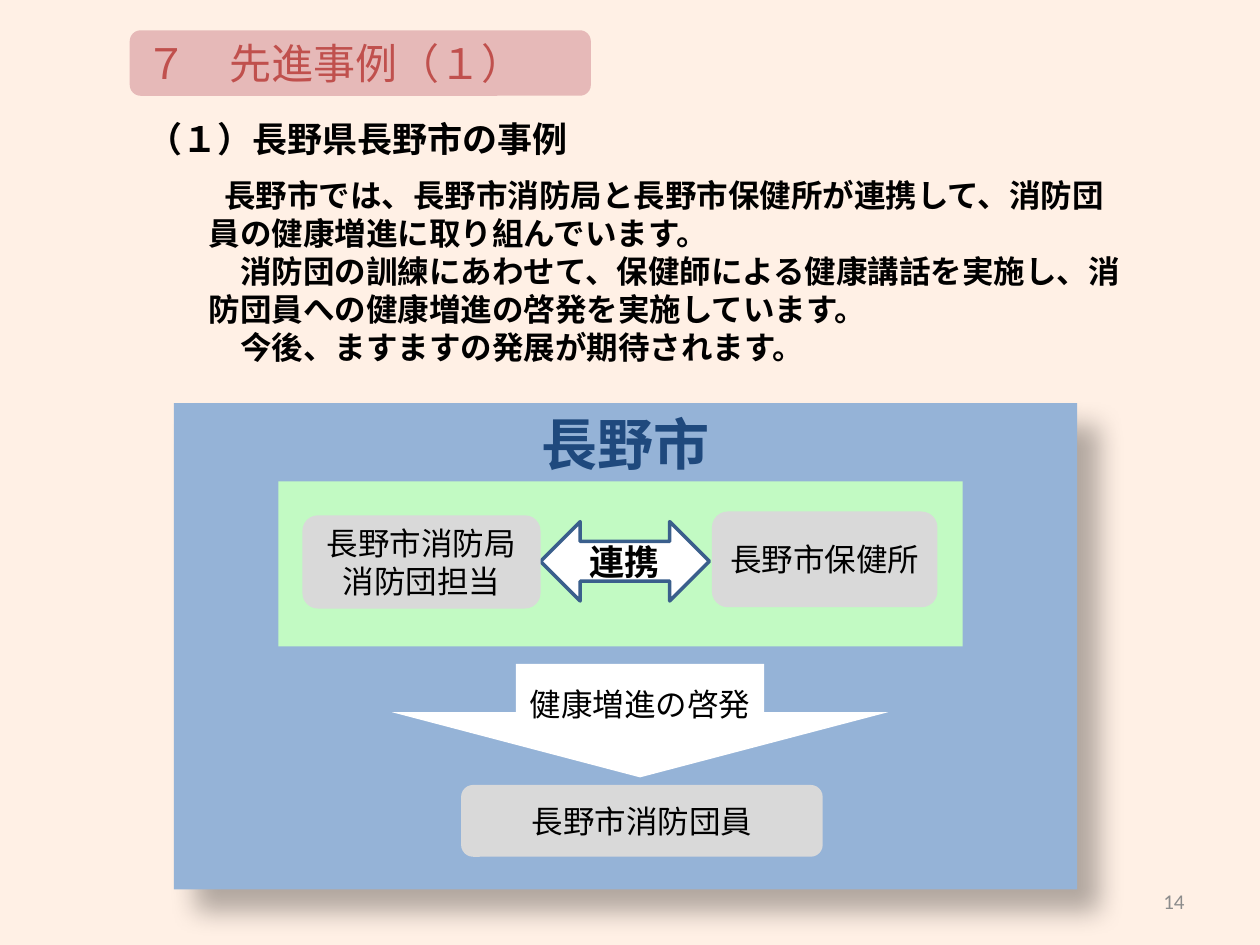
from lxml import etree
from pptx import Presentation
from pptx.dml.color import RGBColor
from pptx.enum.shapes import MSO_SHAPE
from pptx.enum.text import MSO_ANCHOR, PP_ALIGN
from pptx.oxml import parse_xml
from pptx.oxml.ns import qn
from pptx.util import Inches, Pt

RECT, ROUND = MSO_SHAPE.RECTANGLE, MSO_SHAPE.ROUNDED_RECTANGLE
TWO_WAY, DOWN = MSO_SHAPE.LEFT_RIGHT_ARROW, MSO_SHAPE.DOWN_ARROW
TOP, MIDDLE = MSO_ANCHOR.TOP, MSO_ANCHOR.MIDDLE
LEFT, CENTER, RIGHT = PP_ALIGN.LEFT, PP_ALIGN.CENTER, PP_ALIGN.RIGHT

NS = "http://schemas.openxmlformats.org/drawingml/2006/main"
WIDTH, HEIGHT = 10, 7.5
LATIN, GOTHIC = "Calibri", "Noto Sans CJK JP"
BLACK, WHITE, GRAY = "000000", "FFFFFF", "D9D9D9"
BODY = [
    (0.12, "長野市では、長野市消防局と長野市保健所が連携して、消防団\v"
           "員の健康増進に取り組んでいます。"),
    (0.25, "消防団の訓練にあわせて、保健師による健康講話を実施し、消\v"
           "防団員への健康増進の啓発を実施しています。"),
    (0.25, "今後、ますますの発展が期待されます。"),
]


def color(code):
    """Turn a hex string into a colour."""
    return RGBColor.from_string(code)


def write(shape, lines, size, font=LATIN, ink=BLACK, bold=False,
          align=CENTER, anchor=MIDDLE, side=0.1):
    """Fill a shape with uniformly formatted paragraphs."""
    frame = shape.text_frame
    frame.word_wrap = True
    frame.vertical_anchor = anchor
    frame.margin_left = frame.margin_right = Inches(side)
    frame.text = "\n".join(lines)
    for paragraph in frame.paragraphs:
        paragraph.alignment = align
        paragraph.line_spacing = Pt(size * 1.2)
        for run in paragraph.runs:
            run.font.name = font
            run.font.size = Pt(size)
            run.font.bold = bold
            run.font.color.rgb = color(ink)


def add_block(slide, kind, box, fill):
    """Add a flat, borderless preset shape."""
    block = slide.shapes.add_shape(kind, *map(Inches, box))
    block.shadow.inherit = False
    block.fill.solid()
    block.fill.fore_color.rgb = color(fill)
    block.line.fill.background()
    return block


def add_node(slide, kind, box, fill, label, size=18, bold=False):
    """Add a labelled part of the cooperation diagram."""
    node = add_block(slide, kind, box, fill)
    write(node, [label], size, bold=bold, side=0.05)
    return node


def add_text(slide, box, lines, size, **style):
    """Add a wrapping text box."""
    text = slide.shapes.add_textbox(*map(Inches, box))
    write(text, lines, size, **style)
    return text


def cast_shadow(block):
    """Give a block a soft shadow to the lower right."""
    effects = block.element.spPr.find(qn("a:effectLst"))
    effects.append(parse_xml(
        f'<a:outerShdw xmlns:a="{NS}" blurRad="{Pt(15)}" dist="{Pt(18)}" '
        'dir="2700000" algn="tl" rotWithShape="0"><a:srgbClr val="000000">'
        '<a:alpha val="30000"/></a:srgbClr></a:outerShdw>'))


def outline_text(run, code, width):
    """Draw a thin outline around the letters of a run."""
    line = etree.Element(qn("a:ln"), w=str(Pt(width)))
    fill = etree.SubElement(line, qn("a:solidFill"))
    etree.SubElement(fill, qn("a:srgbClr"), val=code)
    run.font._element.insert(0, line)


def add_explanation(slide):
    """Add the heading band, the case title and the case description."""
    band = add_block(slide, ROUND, (1.03, 0.24, 3.66, 0.52), "E6B9B8")
    write(band, ["７　先進事例（１）"], 24, ink="C0504D", align=LEFT)
    add_text(slide, (1.07, 0.84, 8.19, 0.52), ["（１）長野県長野市の事例"], 20,
             font=GOTHIC, bold=True, align=LEFT)
    body = add_text(slide, (1.06, 1.35, 8.2, 1.62), [text for _, text in BODY],
                    18, font=GOTHIC, bold=True, align=LEFT, anchor=TOP)
    for paragraph, (indent, _) in zip(body.text_frame.paragraphs, BODY):
        properties = paragraph._p.get_or_add_pPr()
        properties.set("marL", str(Inches(0.5)))
        properties.set("indent", str(Inches(indent)))


def add_diagram(slide):
    """Add the city panel with its offices, arrows and fire corps."""
    city = add_block(slide, RECT, (1.38, 3.2, 7.17, 3.86), "95B3D7")
    cast_shadow(city)
    write(city, ["長野市"], 32, ink="1F497D", bold=True, anchor=TOP)
    outline_text(city.text_frame.paragraphs[0].runs[0], WHITE, 0.75)
    add_block(slide, RECT, (2.21, 3.82, 5.43, 1.31), "C2FAC3")

    link = add_node(slide, TWO_WAY, (4.29, 4.14, 1.34, 0.63), WHITE, "連携", 20, True)
    link.line.color.rgb = color("3A5F8C")
    link.line.width = Pt(2)
    add_node(slide, ROUND, (2.4, 4.09, 1.89, 0.74), GRAY, "長野市消防局消防団担当")
    add_node(slide, ROUND, (5.65, 4.06, 1.79, 0.76), GRAY, "長野市保健所")
    outreach = add_node(slide, DOWN, (3.11, 5.27, 3.94, 0.9), WHITE, "健康増進の啓発")
    outreach.adjustments[1] = 0.575
    add_node(slide, ROUND, (3.66, 6.23, 2.87, 0.57), GRAY, "長野市消防団員")


def main():
    """Build the slide and save it."""
    deck = Presentation()
    deck.slide_width, deck.slide_height = Inches(WIDTH), Inches(HEIGHT)
    slide = deck.slides.add_slide(deck.slide_layouts[6])
    slide.background.fill.solid()
    slide.background.fill.fore_color.rgb = color("FFF0E5")
    add_explanation(slide)
    add_diagram(slide)
    add_text(slide, (7.17, 6.95, 2.33, 0.4), ["14"], 12, ink="8C8C8C", align=RIGHT)
    deck.save("out.pptx")


if __name__ == "__main__":
    main()
